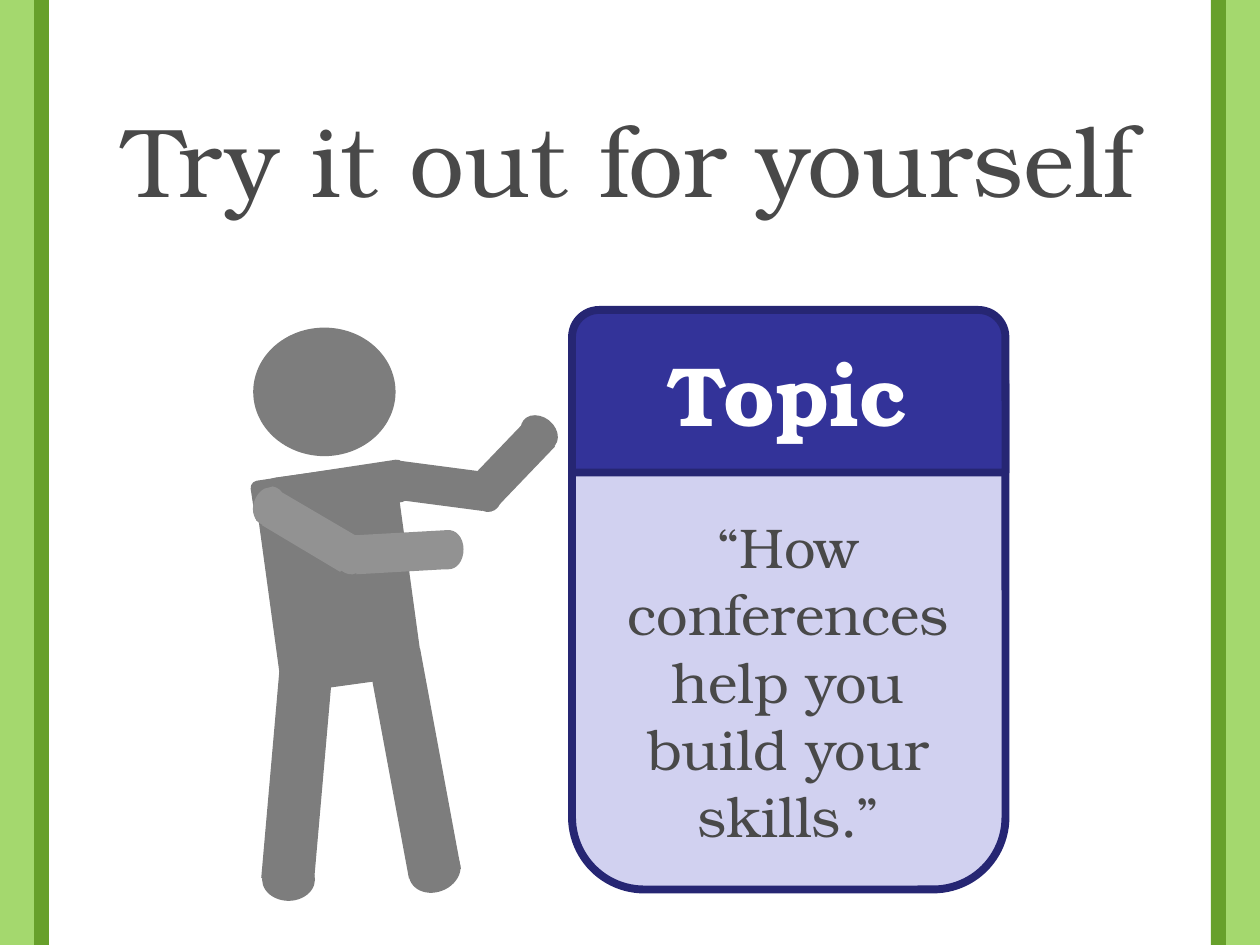
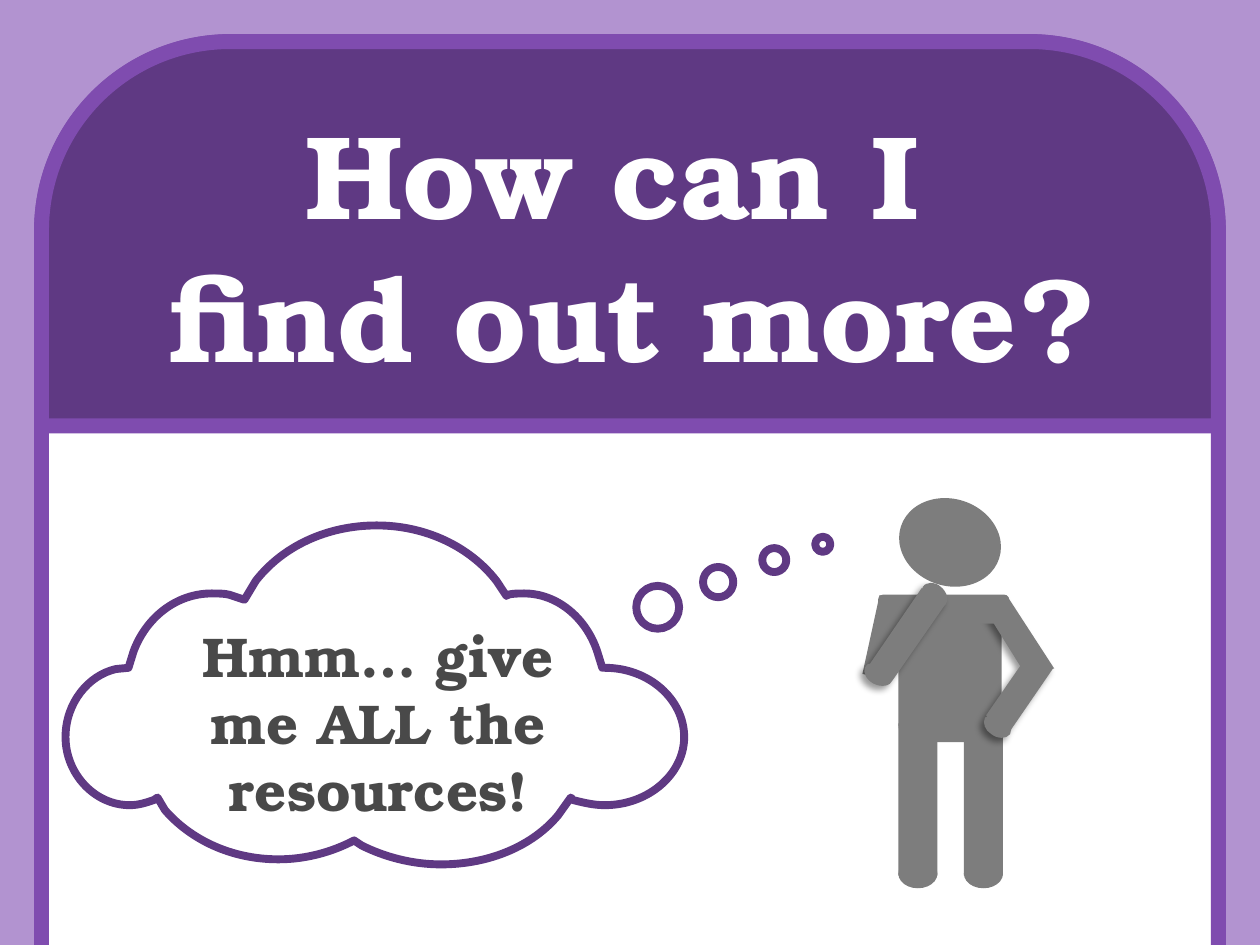
import dataclasses
import math
import typing

import lxml.etree
import pptx
import pptx.dml.color
import pptx.enum.shapes
import pptx.enum.text
import pptx.oxml
import pptx.oxml.ns
import pptx.util

Inches = pptx.util.Inches
Preset = pptx.enum.shapes.MSO_SHAPE
Segment = typing.Tuple[float, ...]

FONT = "TeX Gyre Bonum"
COLORS = {
    "green": "A4D86E", "green_edge": "67A02B",
    "lilac": "B293D0", "violet": "7F4CAF", "purple": "5F3983",
    "card": "D1D1F0", "card_header": "333399", "card_edge": "262673",
    "figure": "7D7D7D", "near_arm": "929292",
    "white": "FFFFFF", "text": "494949",
}


@dataclasses.dataclass(frozen=True)
class Block:
    """A preset shape; lengths in inches, rotation in degrees."""
    preset: Preset
    left: float
    top: float
    width: float
    height: float
    rotation: float = 0
    fill: str = "figure"
    edge: typing.Optional[str] = None
    edge_width: float = 4.5


@dataclasses.dataclass(frozen=True)
class Outline:
    """A closed outline as it stands on the slide, after turning about its pivot.

    Segments of 2 numbers are lines, of 6 are cubic curves.
    """
    start: Segment
    segments: typing.Tuple[Segment, ...]
    rotation: float = 0
    pivot: Segment = (0, 0)
    fill: str = "figure"
    edge: typing.Optional[str] = None
    edge_width: float = 4.5
    shadow: bool = False


@dataclasses.dataclass(frozen=True)
class Label:
    left: float
    top: float
    width: float
    height: float
    lines: typing.Tuple[str, ...]
    size: float
    color: str = "text"
    bold: bool = False


def rgb(name: str) -> pptx.dml.color.RGBColor:
    return pptx.dml.color.RGBColor.from_string(COLORS[name])


def paint(shape, item: typing.Union[Block, Outline]) -> None:
    shape.rotation = item.rotation
    shape.shadow.inherit = False
    shape.fill.solid()
    shape.fill.fore_color.rgb = rgb(item.fill)
    if item.edge is None:
        shape.line.fill.background()
    else:
        shape.line.color.rgb = rgb(item.edge)
        shape.line.width = pptx.util.Pt(item.edge_width)


def add_block(shapes, block: Block) -> None:
    shape = shapes.add_shape(block.preset, Inches(block.left), Inches(block.top),
                             Inches(block.width), Inches(block.height))
    paint(shape, block)


def turn_back(point: Segment, outline: Outline) -> typing.Tuple[int, int]:
    """Undo the outline's rotation for one point, giving EMU."""
    angle = math.radians(-outline.rotation)
    center_x, center_y = outline.pivot
    x, y = point[0] - center_x, point[1] - center_y
    return (Inches(center_x + x * math.cos(angle) - y * math.sin(angle)),
            Inches(center_y + x * math.sin(angle) + y * math.cos(angle)))


def add_soft_shadow(shape) -> None:
    effects = shape._element.spPr.find(pptx.oxml.ns.qn("a:effectLst"))
    shadow = lxml.etree.SubElement(
        effects, pptx.oxml.ns.qn("a:outerShdw"), blurRad=str(pptx.util.Pt(4)),
        dist=str(pptx.util.Pt(3)), dir=str(135 * 60000), rotWithShape="0")
    color = lxml.etree.SubElement(shadow, pptx.oxml.ns.qn("a:srgbClr"), val="000000")
    lxml.etree.SubElement(color, pptx.oxml.ns.qn("a:alpha"), val="40000")


def bend_curves(shape, segments: typing.Tuple[Segment, ...]) -> None:
    """Merge each three lines that stand for a curve into one cubic curve."""
    lines = iter(list(shape._element.iter(pptx.oxml.ns.qn("a:lnTo"))))
    for segment in segments:
        first = next(lines)
        if len(segment) == 6:
            first.tag = pptx.oxml.ns.qn("a:cubicBezTo")
            for line in (next(lines), next(lines)):
                first.append(line[0])
                line.getparent().remove(line)


def add_outline(shapes, outline: Outline) -> None:
    points = [outline.start]
    for segment in outline.segments:
        points += [segment[index:index + 2] for index in range(0, len(segment), 2)]
    vertices = [turn_back(point, outline) for point in points]
    builder = shapes.build_freeform(*vertices[0])
    builder.add_line_segments(vertices[1:], close=True)
    shape = builder.convert_to_shape()
    bend_curves(shape, outline.segments)
    paint(shape, outline)
    if outline.shadow:
        add_soft_shadow(shape)


def add_label(shapes, label: Label) -> None:
    box = shapes.add_textbox(Inches(label.left), Inches(label.top),
                             Inches(label.width), Inches(label.height))
    frame = box.text_frame
    frame.word_wrap = True
    frame.auto_size = pptx.enum.text.MSO_AUTO_SIZE.SHAPE_TO_FIT_TEXT
    for index, line in enumerate(label.lines):
        paragraph = frame.add_paragraph() if index else frame.paragraphs[0]
        paragraph.alignment = pptx.enum.text.PP_ALIGN.CENTER
        run = paragraph.add_run()
        run.text = line
        run.font.name = FONT
        run.font.size = pptx.util.Pt(label.size)
        run.font.bold = label.bold
        run.font.color.rgb = rgb(label.color)


def add_items(shapes, items: typing.Iterable) -> None:
    drawers = {Block: add_block, Outline: add_outline, Label: add_label}
    for item in items:
        drawers[type(item)](shapes, item)


def add_group(slide, items: typing.Iterable) -> None:
    add_items(slide.shapes.add_group_shape().shapes, items)


def add_framed_slide(presentation, background: str, edge: str, top: float, height: float):
    """Add a slide whose white panel leaves a coloured margin."""
    slide = presentation.slides.add_slide(presentation.slide_layouts[6])
    slide.background.fill.solid()
    slide.background.fill.fore_color.rgb = rgb(background)
    add_block(slide.shapes, Block(Preset.ROUNDED_RECTANGLE, 0.33, top, 9.34, height,
                                  fill="white", edge=edge, edge_width=8.5))
    return slide


TOPIC_CARD = (
    Block(Preset.ROUNDED_RECTANGLE, 4.54, 2.5, 3.44, 4.56, fill="card", edge="card_edge"),
    Block(Preset.ROUND_2_SAME_RECTANGLE, 4.54, 2.46, 3.44, 1.29,
          fill="card_header", edge="card_edge"),
    Label(4.83, 2.67, 2.85, 0.91, ("Topic",), 48, "white", True),
    Label(4.83, 4.02, 2.85, 2.79, ("“How conferences help you build your skills.”",), 32),
)

PRESENTER = (
    Block(Preset.OVAL, 2.01, 2.6, 1.13, 1.02),
    Block(Preset.ROUNDED_RECTANGLE, 2.12, 3.73, 1.13, 1.71, 352.2),
    Block(Preset.RECTANGLE, 2.15, 5.21, 0.42, 1.78, 5),
    Block(Preset.RECTANGLE, 3.08, 5.17, 0.42, 1.78, 349.5),
    Block(Preset.OVAL, 2.08, 6.81, 0.42, 0.34),
    Block(Preset.OVAL, 3.24, 6.74, 0.42, 0.34, 338.4),
    Block(Preset.RECTANGLE, 3.34, 3.5, 0.31, 0.71, 277.5),
    Block(Preset.OVAL, 4.12, 3.31, 0.32, 0.25, 38.4),
    Block(Preset.ROUNDED_RECTANGLE, 2, 3.73, 1.23, 0.34, 351.4),
    Block(Preset.RECTANGLE, 3.92, 3.35, 0.31, 0.63, 43.8),
    Block(Preset.OVAL, 3.7, 3.78, 0.32, 0.25, 256.8),
    Outline((2.14, 3.85), (
        (2.16, 3.84, 2.17, 3.84, 2.19, 3.85), (2.21, 3.86, 2.23, 3.87, 2.24, 3.89),
        (2.82, 4.23), (3.53, 4.19), (3.53, 4.19, 3.54, 4.19, 3.55, 4.19),
        (3.62, 4.18, 3.68, 4.25, 3.68, 4.34), (3.68, 4.43, 3.63, 4.5, 3.56, 4.5),
        (3.53, 4.5), (2.83, 4.54), (2.83, 4.53), (2.79, 4.55, 2.75, 4.54, 2.71, 4.51),
        (2.7, 4.52), (2.08, 4.15), (2.09, 4.15), (2.02, 4.12, 1.99, 4.04, 2.02, 3.96),
        (2.04, 3.9, 2.09, 3.85, 2.14, 3.85)), 300.6, (2.84, 4.18), fill="near_arm"),
)

LEG_LEFTS = (7.65, 7.13)
THINKER = (
    Block(Preset.OVAL, 7.13, 3.96, 0.82, 0.69, 18.1),
    Block(Preset.ROUNDED_RECTANGLE, 7.13, 4.73, 0.82, 1.16),
    *(Block(Preset.RECTANGLE, left, 5.74, 0.31, 1.21) for left in LEG_LEFTS),
    *(Block(Preset.OVAL, left, 6.82, 0.31, 0.23) for left in LEG_LEFTS),
    Block(Preset.RECTANGLE, 6.91, 4.74, 0.22, 0.64, 12.3),
    Outline((8, 4.74), (
        (7.82, 4.84), (8.1, 5.29), (7.83, 5.68), (7.84, 5.69),
        (7.83, 5.69, 7.83, 5.69, 7.82, 5.7), (7.8, 5.74, 7.82, 5.8, 7.87, 5.83),
        (7.92, 5.87, 7.99, 5.87, 8.02, 5.83), (8.02, 5.81, 8.03, 5.8, 8.03, 5.79),
        (8.36, 5.31), (8.37, 5.31)), 35.3, (7.94, 5.3), shadow=True),
    Block(Preset.ROUNDED_RECTANGLE, 6.97, 4.72, 1.04, 0.23),
    Outline((7.38, 4.63), (
        (7.36, 4.63, 7.33, 4.64, 7.32, 4.66), (7.31, 4.68), (7.31, 4.67), (6.9, 5.27),
        (6.88, 5.27, 6.87, 5.28, 6.86, 5.3), (6.84, 5.34, 6.87, 5.4, 6.93, 5.43),
        (6.99, 5.46, 7.06, 5.45, 7.08, 5.4), (7.49, 4.81),
        (7.49, 4.81, 7.5, 4.81, 7.5, 4.8), (7.53, 4.77, 7.51, 4.7, 7.46, 4.66),
        (7.44, 4.64, 7.41, 4.63, 7.38, 4.63)), 38.3, (7.19, 5.04), shadow=True),
)

THOUGHT_CLOUD = Outline((2.99, 4.17), (
    (3.38, 4.17, 3.73, 4.34, 3.94, 4.61), (4.02, 4.73), (4.03, 4.72),
    (4.07, 4.71, 4.12, 4.71, 4.16, 4.71), (4.42, 4.71, 4.65, 4.9, 4.74, 5.17),
    (4.78, 5.3), (4.8, 5.3), (5.15, 5.3, 5.43, 5.55, 5.43, 5.85),
    (5.43, 6.14, 5.15, 6.39, 4.8, 6.39), (4.71, 6.39, 4.63, 6.37, 4.55, 6.35),
    (4.53, 6.33), (4.43, 6.47), (4.23, 6.71, 3.89, 6.86, 3.5, 6.86),
    (3.27, 6.86, 3.05, 6.8, 2.87, 6.71), (2.81, 6.67),
    (2.64, 6.76, 2.43, 6.82, 2.21, 6.82), (1.83, 6.82, 1.51, 6.66, 1.31, 6.43),
    (1.25, 6.33), (1.22, 6.35), (1.16, 6.37, 1.1, 6.39, 1.03, 6.39),
    (0.75, 6.39, 0.52, 6.14, 0.52, 5.85), (0.52, 5.58, 0.7, 5.36, 0.92, 5.31),
    (1.02, 5.3), (1.06, 5.17), (1.16, 4.9, 1.4, 4.71, 1.68, 4.71),
    (1.73, 4.71, 1.78, 4.71, 1.82, 4.72), (1.94, 4.76), (2.03, 4.61),
    (2.24, 4.34, 2.59, 4.17, 2.99, 4.17)), fill="white", edge="purple")

THOUGHT_BUBBLES = tuple(
    Block(Preset.OVAL, left, top, size, size, fill="white", edge="purple")
    for left, top, size in ((5.05, 4.65, 0.34), (5.58, 4.5, 0.24),
                            (6.05, 4.35, 0.19), (6.47, 4.26, 0.12)))


def build_try_it_slide(presentation) -> None:
    slide = add_framed_slide(presentation, "green", "green_edge", -2.17, 11.67)
    add_group(slide, TOPIC_CARD)
    add_label(slide.shapes, Label(0.83, 0.74, 8.33, 1.04, ("Try it out for yourself",), 56))
    add_group(slide, PRESENTER)


def build_find_out_slide(presentation) -> None:
    slide = add_framed_slide(presentation, "lilac", "violet", 0.33, 9)
    header = Outline((1.83, 0.33), (
        (8.17, 0.33), (9, 0.33, 9.67, 1, 9.67, 1.83), (9.67, 3.38), (0.33, 3.38),
        (0.33, 1.83), (0.33, 1, 1, 0.33, 1.83, 0.33)),
        fill="purple", edge="violet", edge_width=8.5)
    title = Label(0.83, 0.75, 8.38, 2.39, ("How can I ", "find out more?"), 68, "white", True)
    add_items(slide.shapes, (header, title))
    add_group(slide, THINKER)
    thought = Label(1.47, 4.88, 3.07, 1.72, ("Hmm… give me ALL the resources!",), 32, bold=True)
    add_items(slide.shapes, (THOUGHT_CLOUD, *THOUGHT_BUBBLES, thought))


def main() -> None:
    presentation = pptx.Presentation()
    presentation.slide_width = Inches(10)
    presentation.slide_height = Inches(7.5)
    build_try_it_slide(presentation)
    build_find_out_slide(presentation)
    presentation.save("out.pptx")


if __name__ == "__main__":
    main()
